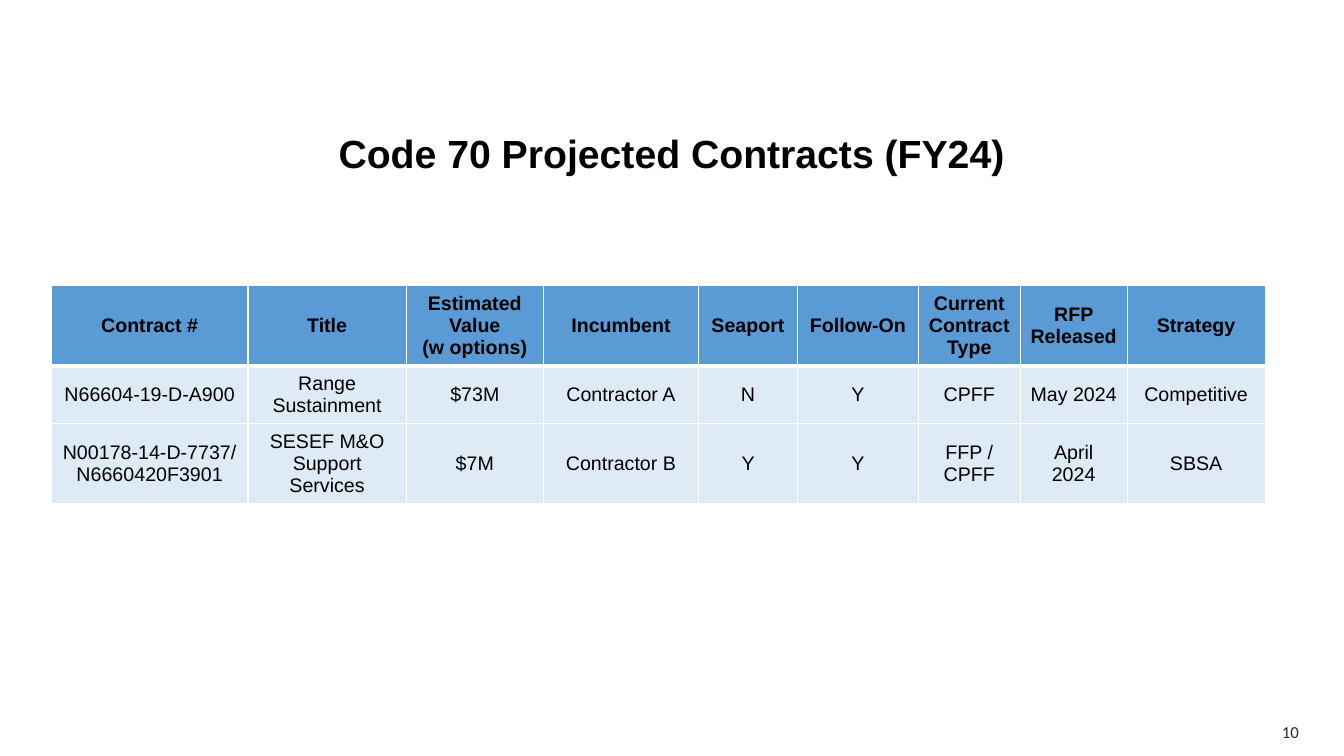
from dataclasses import dataclass

from lxml.etree import SubElement
from pptx import Presentation
from pptx.dml.color import RGBColor
from pptx.enum.text import MSO_ANCHOR as Anchor, PP_ALIGN as Align
from pptx.oxml.ns import qn
from pptx.util import Inches, Pt

TITLE = "Code 70 Projected Contracts (FY24)"
PAGE_NUMBER = "10"
HEADINGS = [
    "Contract #", "Title", "Estimated Value\n(w options)", "Incumbent", "Seaport",
    "Follow-On", "Current Contract Type", "RFP Released", "Strategy",
]
CONTRACTS = [
    ["N66604-19-D-A900", "Range Sustainment", "$73M", "Contractor A", "N",
     "Y", "CPFF", "May 2024", "Competitive"],
    ["N00178-14-D-7737/ N6660420F3901", "SESEF M&O Support Services", "$7M", "Contractor B", "Y",
     "Y", "FFP / CPFF", "April 2024", "SBSA"],
]
COLUMN_WIDTHS = [1.95, 1.57, 1.36, 1.54, 0.98, 1.2, 1.01, 1.06, 1.37]
ROW_HEIGHTS = [0.66, 0.51, 0.51]


@dataclass(frozen=True)
class Theme:
    font: str = "Arial"
    number_font: str = "Calibri"
    ink: str = "000000"
    number_ink: str = "222A35"
    heading_fill: str = "5B9BD5"
    contract_fill: str = "DEEBF7"
    rule: str = "FFFFFF"
    title_size: int = 28
    table_size: int = 14
    number_size: int = 12
    thin: int = 1
    thick: int = 3


theme = Theme()


def style(paragraph, size, bold=False, align=Align.CENTER, font=theme.font, ink=theme.ink):
    paragraph.alignment = align
    paragraph.font.name = font
    paragraph.font.size = Pt(size)
    paragraph.font.bold = bold
    paragraph.font.color.rgb = RGBColor.from_string(ink)


def add_label(slide, text, left, top, width, height, anchor):
    frame = slide.shapes.add_textbox(*map(Inches, (left, top, width, height))).text_frame
    frame.word_wrap = True
    frame.vertical_anchor = anchor
    frame.text = text
    return frame


def add_borders(cell, top, bottom):
    properties = cell._tc.get_or_add_tcPr()
    for side, weight in (("L", theme.thin), ("R", theme.thin), ("T", top), ("B", bottom)):
        line = SubElement(properties, qn(f"a:ln{side}"), w=str(Pt(weight)))
        fill = SubElement(line, qn("a:solidFill"))
        SubElement(fill, qn("a:srgbClr"), val=theme.rule)


def add_contract_table(slide):
    rows = [HEADINGS, *CONTRACTS]
    table = slide.shapes.add_table(
        len(rows), len(HEADINGS), Inches(0.51), Inches(2.83),
        Inches(sum(COLUMN_WIDTHS)), Inches(sum(ROW_HEIGHTS)),
    ).table
    table.horz_banding = False
    for column, width in zip(table.columns, COLUMN_WIDTHS):
        column.width = Inches(width)
    for row, height in zip(table.rows, ROW_HEIGHTS):
        row.height = Inches(height)
    for r, entries in enumerate(rows):
        heading = r == 0
        top = theme.thick if r == 1 else theme.thin
        bottom = theme.thick if heading else theme.thin
        for c, entry in enumerate(entries):
            cell = table.cell(r, c)
            cell.text = entry
            cell.vertical_anchor = Anchor.MIDDLE
            add_borders(cell, top, bottom)
            cell.fill.solid()
            cell.fill.fore_color.rgb = RGBColor.from_string(
                theme.heading_fill if heading else theme.contract_fill)
            for paragraph in cell.text_frame.paragraphs:
                style(paragraph, theme.table_size, bold=heading)


def main():
    deck = Presentation()
    deck.slide_width, deck.slide_height = Inches(13.33), Inches(7.5)
    slide = deck.slides.add_slide(deck.slide_layouts[6])

    number = add_label(slide, PAGE_NUMBER, 9.98, 7.06, 3, 0.4, Anchor.MIDDLE)
    style(number.paragraphs[0], theme.number_size, align=Align.RIGHT,
          font=theme.number_font, ink=theme.number_ink)

    title = add_label(slide, TITLE, 1.23, 1.37, 10.86, 0.74, Anchor.TOP)
    title.margin_top = 0
    title.paragraphs[0].line_spacing = 0.8
    style(title.paragraphs[0], theme.title_size, bold=True)

    add_contract_table(slide)
    deck.save("out.pptx")


if __name__ == "__main__":
    main()
